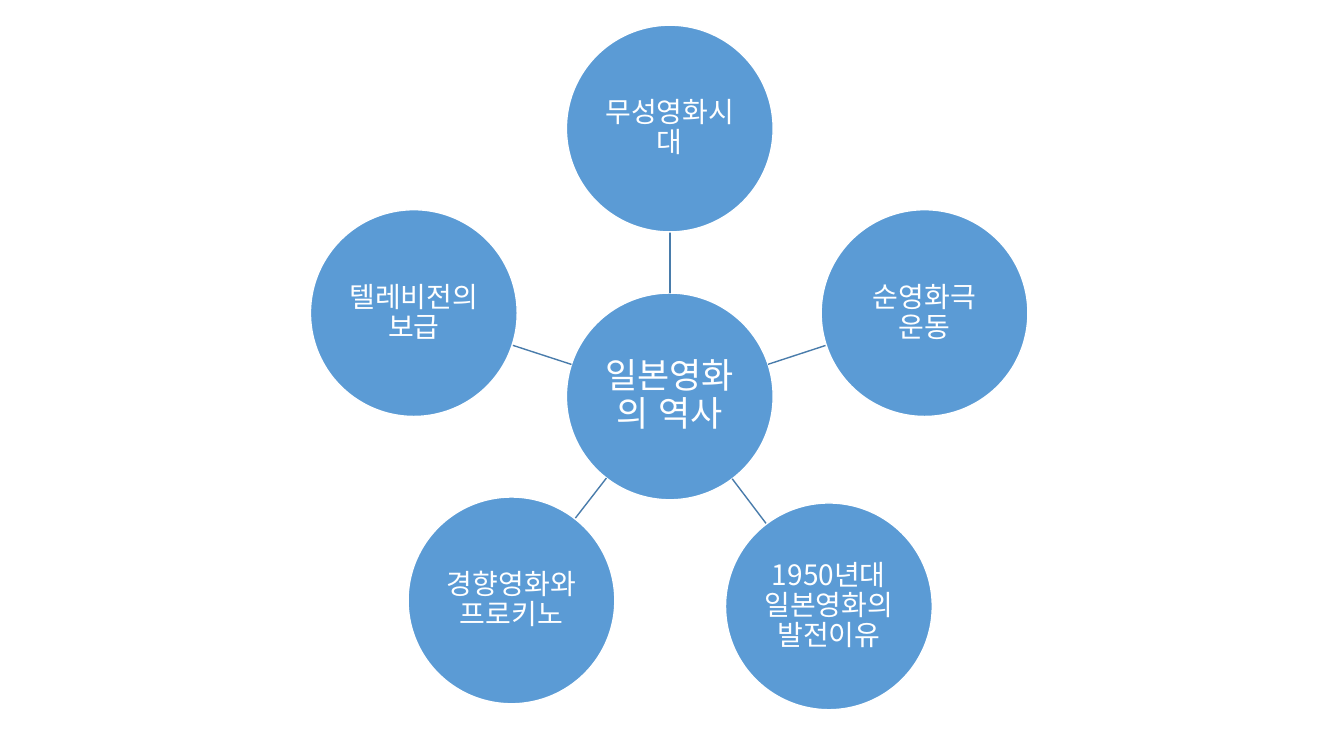
"""Build a radial diagram on the history of Japanese film."""
import math

from pptx import Presentation
from pptx.dml.color import RGBColor
from pptx.enum import lang, shapes, text
from pptx.oxml import ns, xmlchemy
from pptx.util import Cm, Pt

COLORS = {"circle": "5B9BD5", "spoke": "497CAB", "white": "FFFFFF"}
FONT = "Noto Sans CJK KR"
DIAMETER = 5.21
RADIUS = DIAMETER / 2
HUB_X, HUB_Y = 16.88, 9.99
TOPICS = [
    ("무성영화시대", 16.88, 3.24),
    ("순영화극 운동", 23.3, 7.89),
    ("1950년대 일본영화의 발전이유", 20.89, 15.28),
    ("경향영화와 프로키노", 12.89, 15.13),
    ("텔레비전의 보급", 10.43, 7.89),
]

prs = Presentation()
prs.slide_width, prs.slide_height = Cm(33.87), Cm(19.05)
s = prs.slides.add_slide(prs.slide_layouts[6])


def add_circle(label, *, x, y, size=20, inset=0.03):
    sp = s.shapes.add_shape(shapes.MSO_SHAPE.OVAL, Cm(x - RADIUS), Cm(y - RADIUS),
                            Cm(DIAMETER), Cm(DIAMETER))
    sp.shadow.inherit = False
    sp.fill.solid()
    sp.fill.fore_color.rgb = RGBColor.from_string(COLORS["circle"])
    sp.line.color.rgb = RGBColor.from_string(COLORS["white"])
    sp.line.width = Pt(1)
    tf = sp.text_frame
    tf.word_wrap = True
    tf.vertical_anchor = text.MSO_ANCHOR.MIDDLE
    tf.margin_left = tf.margin_right = tf.margin_top = tf.margin_bottom = Cm(inset)
    p = tf.paragraphs[0]
    p.alignment = text.PP_ALIGN.CENTER
    p.line_spacing = 0.9
    r = p.add_run()
    r.text = label
    r.font.size = Pt(size)
    r.font.name = FONT
    r.font.language_id = lang.MSO_LANGUAGE_ID.KOREAN
    r.font.color.rgb = RGBColor.from_string(COLORS["white"])
    ea = xmlchemy.OxmlElement("a:ea")
    ea.set("typeface", FONT)
    r.font._element.find(ns.qn("a:latin")).addnext(ea)


add_circle("일본영화의 역사", x=HUB_X, y=HUB_Y, size=25, inset=0.05)

for label, x, y in TOPICS:
    angle = math.atan2(y - HUB_Y, x - HUB_X)
    dx, dy = RADIUS * math.cos(angle), RADIUS * math.sin(angle)
    spoke = s.shapes.add_connector(shapes.MSO_CONNECTOR.STRAIGHT, Cm(HUB_X + dx),
                                   Cm(HUB_Y + dy), Cm(x - dx), Cm(y - dy))
    spoke.line.color.rgb = RGBColor.from_string(COLORS["spoke"])
    spoke.line.width = Pt(1)
    spoke._element.spPr.append(xmlchemy.OxmlElement("a:effectLst"))
    add_circle(label, x=x, y=y)

prs.save("out.pptx")
